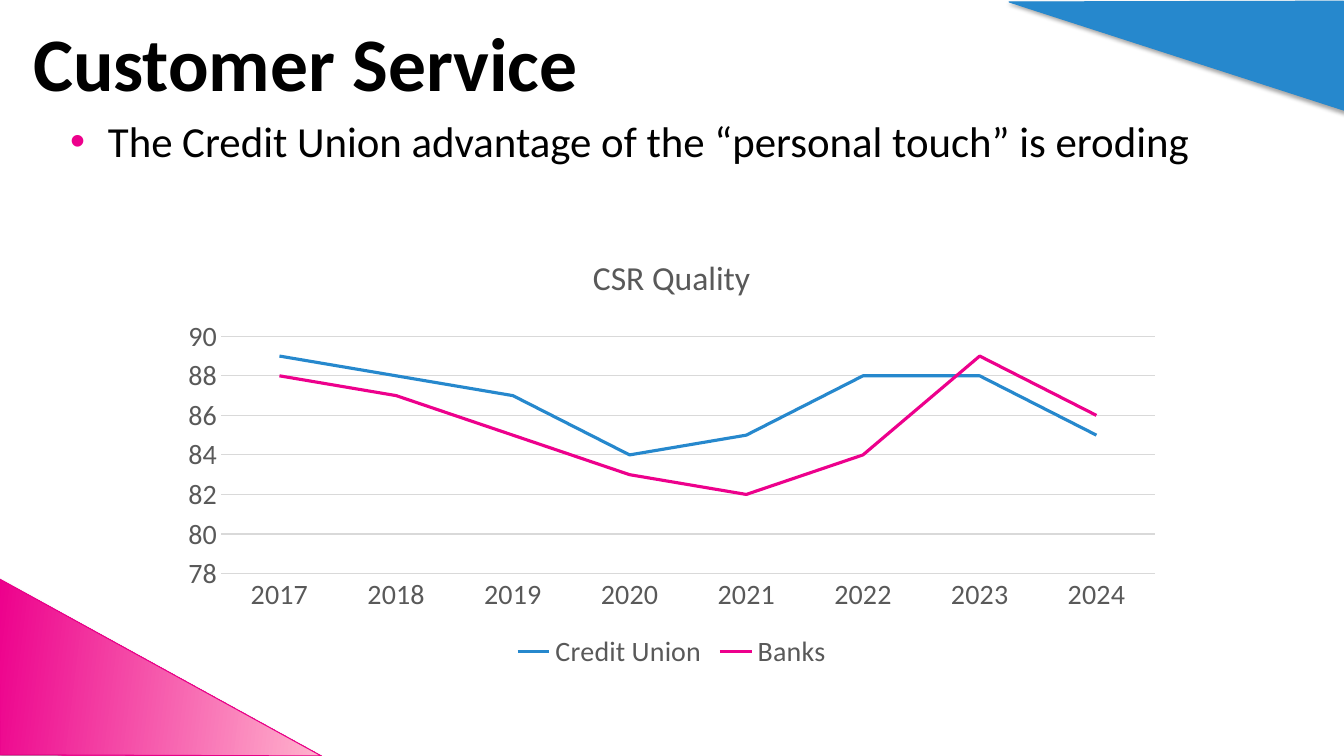
from lxml.etree import SubElement
from pptx import Presentation
from pptx.chart.data import CategoryChartData
from pptx.dml.color import RGBColor
from pptx.enum.chart import XL_CHART_TYPE, XL_LEGEND_POSITION, XL_TICK_MARK
from pptx.enum.text import MSO_ANCHOR, PP_ALIGN
from pptx.oxml import parse_xml
from pptx.oxml.ns import nsdecls, qn
from pptx.util import Cm, Pt

BLUE = RGBColor(0x26, 0x88, 0xCD)
PINK = RGBColor(0xED, 0x00, 0x8C)
ROSE = RGBColor(0xFF, 0xB4, 0xCD)
EDGE = RGBColor(0xE8, 0x00, 0x89)
BLACK = RGBColor(0, 0, 0)
GREY = RGBColor(0x59, 0x59, 0x59)
PALE = RGBColor(0xD9, 0xD9, 0xD9)
FONT = "Calibri"

YEARS = [str(year) for year in range(2017, 2025)]
SCORES = [
    ("Credit Union", BLUE, (89, 88, 87, 84, 85, 88, 88, 85)),
    ("Banks", PINK, (88, 87, 85, 83, 82, 84, 89, 86)),
]


def set_font(font, size, color, bold=False):
    font.name = FONT
    font.size = Pt(size)
    font.bold = bold
    font.color.rgb = color


def set_line(line, color, width=0.75):
    line.color.rgb = color
    line.width = Pt(width)


def add_shadow(shape):
    shape.shadow.inherit = False
    effects = shape.element.spPr.find(qn("a:effectLst"))
    effects.append(parse_xml(
        f'<a:outerShdw {nsdecls("a")} blurRad="39370" dist="22860" '
        'dir="5400000" rotWithShape="0"><a:srgbClr val="000000">'
        '<a:alpha val="35000"/></a:srgbClr></a:outerShdw>'))


def add_corner(slide, points, edge):
    """Draw a shadowed triangle; points are in centimetres."""
    first, *rest = [(Cm(x), Cm(y)) for x, y in points]
    pen = slide.shapes.build_freeform(*first)
    pen.add_line_segments(rest, close=True)
    corner = pen.convert_to_shape()
    set_line(corner.line, edge)
    add_shadow(corner)
    return corner


def add_title(slide, text):
    title = slide.shapes.title
    title.left, title.top = Cm(0.58), Cm(0.36)
    title.width, title.height = Cm(26.67), Cm(2.36)
    frame = title.text_frame
    frame.text = text
    frame.vertical_anchor = MSO_ANCHOR.MIDDLE
    line = frame.paragraphs[0]
    line.alignment = PP_ALIGN.LEFT
    set_font(line.runs[0].font, 54, BLACK, True)


def add_bullet(slide, text):
    box = slide.shapes.add_textbox(Cm(1.52), Cm(2.77), Cm(30.1), Cm(1.8))
    frame = box.text_frame
    frame.word_wrap = True
    frame.text = text
    line = frame.paragraphs[0]
    line.space_after = Pt(6)
    set_font(line.runs[0].font, 30.6, BLACK)
    props = line._p.get_or_add_pPr()
    props.set("marL", str(Cm(0.95)))
    props.set("indent", str(-Cm(0.95)))
    color = SubElement(props, qn("a:buClr"))
    SubElement(color, qn("a:srgbClr"), val=str(PINK))
    SubElement(props, qn("a:buFont"), typeface="Arial")
    SubElement(props, qn("a:buChar"), char="•")


def style_axes(chart):
    years, scale = chart.category_axis, chart.value_axis
    for axis in (years, scale):
        axis.major_tick_mark = axis.minor_tick_mark = XL_TICK_MARK.NONE
        set_font(axis.tick_labels.font, 20, GREY)
    set_line(years.format.line, PALE)
    scale.format.line.fill.background()
    set_line(scale.major_gridlines.format.line, PALE)
    scale.minimum_scale, scale.maximum_scale = 78, 90
    scale.major_unit = 2
    scale.tick_labels.number_format = "0"
    scale.tick_labels.number_format_is_linked = False


def add_lines(slide, heading):
    data = CategoryChartData()
    data.categories = YEARS
    for name, _, values in SCORES:
        data.add_series(name, values)
    chart = slide.shapes.add_chart(
        XL_CHART_TYPE.LINE, Cm(4.24), Cm(5.92), Cm(25.37), Cm(11.07), data
    ).chart
    set_font(chart.font, 20, BLACK)
    chart.plots[0].vary_by_categories = False

    # Heading and legend
    chart.has_title = True
    frame = chart.chart_title.text_frame
    frame.text = heading
    set_font(frame.paragraphs[0].runs[0].font, 24, GREY)
    chart.chart_title.include_in_layout = False
    chart.has_legend = True
    chart.legend.position = XL_LEGEND_POSITION.BOTTOM
    chart.legend.include_in_layout = False
    set_font(chart.legend.font, 20, GREY)

    # Axes and series
    style_axes(chart)
    for series, (_, color, _) in zip(chart.plots[0].series, SCORES):
        series.smooth = False
        set_line(series.format.line, color, 2.25)


def main():
    deck = Presentation()
    deck.slide_width, deck.slide_height = Cm(33.87), Cm(19.05)
    slide = deck.slides.add_slide(deck.slide_layouts.get_by_name("Title Only"))

    # Corner triangles
    top = add_corner(
        slide, [(33.86, 0.03), (33.91, 2.79), (25.43, 0.05)], BLUE)
    top.fill.solid()
    top.fill.fore_color.rgb = BLUE
    base = add_corner(
        slide, [(-0.03, 14.58), (8.1, 19.05), (0, 19.02)], EDGE)
    base.fill.gradient()
    base.fill.gradient_angle = 353
    for stop, color in zip(base.fill.gradient_stops, (PINK, ROSE)):
        stop.color.rgb = color

    # Text and chart
    add_title(slide, "Customer Service")
    add_bullet(
        slide, "The Credit Union advantage of the “personal touch” is eroding")
    add_lines(slide, "CSR Quality")
    deck.save("out.pptx")


if __name__ == "__main__":
    main()
